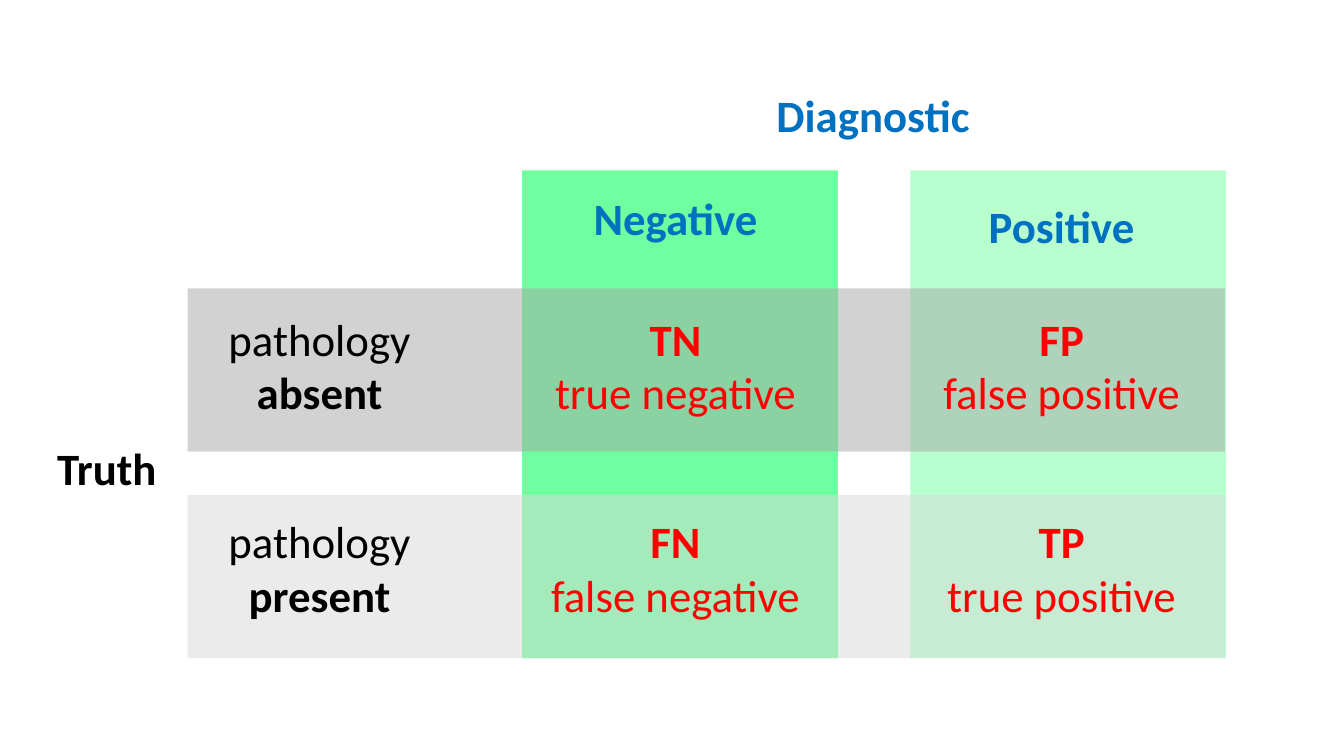
from dataclasses import dataclass

from lxml.etree import SubElement
from pptx import Presentation
from pptx.dml.color import RGBColor
from pptx.enum.shapes import MSO_SHAPE
from pptx.enum.text import MSO_AUTO_SIZE, PP_ALIGN
from pptx.oxml.ns import qn
from pptx.util import Inches, Pt


@dataclass(frozen=True)
class Theme:
    font: str = "Calibri"
    size: int = 32
    text: str = "000000"
    heading: str = "0070C0"
    outcome: str = "FF0000"
    negative: str = "70FFA0"
    positive: str = "B8FFCF"
    absent: str = "A6A6A6"
    present: str = "D9D9D9"


theme = Theme()
presentation = Presentation()
presentation.slide_width = Inches(13.33)
presentation.slide_height = Inches(7.5)
slide = presentation.slides.add_slide(presentation.slide_layouts[6])


def add_band(left, top, width, height, color, opacity=100):
    shape = slide.shapes.add_shape(
        MSO_SHAPE.RECTANGLE, Inches(left), Inches(top), Inches(width), Inches(height))
    shape.shadow.inherit = False
    shape.line.fill.background()
    shape.fill.solid()
    shape.fill.fore_color.rgb = RGBColor.from_string(color)
    if opacity < 100:
        color_element = shape.fill._xPr.find(qn("a:solidFill"))[0]
        SubElement(color_element, qn("a:alpha"), val=str(opacity * 1000))


def add_label(center, top, width, lines, color):
    """Add centred text; lines holds (text, bold) pairs."""
    height = 0.1 + 0.54 * len(lines)
    box = slide.shapes.add_textbox(
        Inches(center - width / 2), Inches(top), Inches(width), Inches(height))
    frame = box.text_frame
    frame.word_wrap = False
    frame.auto_size = MSO_AUTO_SIZE.SHAPE_TO_FIT_TEXT
    for index, (text, bold) in enumerate(lines):
        paragraph = frame.paragraphs[0] if index == 0 else frame.add_paragraph()
        paragraph.alignment = PP_ALIGN.CENTER
        run = paragraph.add_run()
        run.text = text
        font_format = {"name": theme.font, "size": Pt(theme.size), "bold": bold}
        for name, value in font_format.items():
            setattr(run.font, name, value)
        run.font.color.rgb = RGBColor.from_string(color)


# Diagnostic columns, then the translucent truth rows across them
for left, color in [(5.18, theme.negative), (9.03, theme.positive)]:
    add_band(left, 1.69, 3.13, 4.84, color)
for top, color in [(2.86, theme.absent), (4.91, theme.present)]:
    add_band(1.86, top, 10.29, 1.62, color, opacity=50)

# Axis and column headings
for center, top, width, text, color in [
    (8.66, 0.82, 2.14, "Diagnostic", theme.heading),
    (6.7, 1.84, 1.85, "Negative", theme.heading),
    (10.53, 1.92, 1.66, "Positive", theme.heading),
    (1.06, 4.32, 1.2, "Truth", theme.text),
]:
    add_label(center, top, width, [(text, True)], color)

# Row labels and outcomes
outcome_columns = [6.7, 10.53]
truth_rows = [
    (3.04, "absent", [("TN", "true negative", 2.62), ("FP", "false positive", 2.58)]),
    (5.05, "present", [("FN", "false negative", 2.7), ("TP", "true positive", 2.5)]),
]
for top, state, outcomes in truth_rows:
    add_label(3.17, top, 2.03, [("pathology", False), (state, True)], theme.text)
    for center, (code, meaning, width) in zip(outcome_columns, outcomes):
        add_label(center, top, width, [(code, True), (meaning, False)], theme.outcome)

presentation.save("out.pptx")
